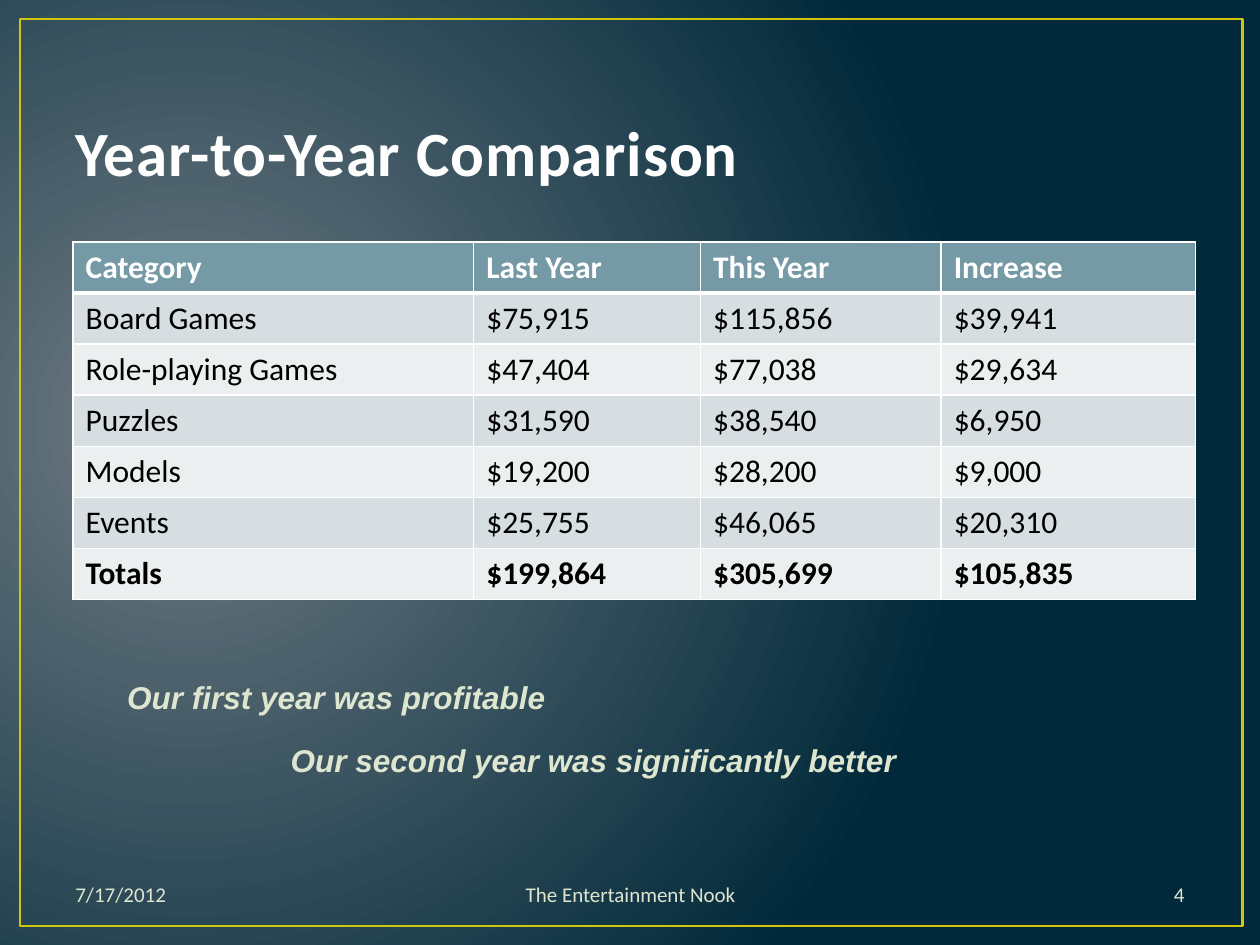
"""Build the year-to-year comparison slide."""
from dataclasses import dataclass

from lxml import etree
from pptx import Presentation
from pptx import util as u
from pptx.dml.color import RGBColor
from pptx.enum import shapes, text
from pptx.oxml import ns

HUES = {
    "glow": "717C84", "deep": "01293A", "frame": "CFC60D", "title": "FEFEFE",
    "edge": "384F55", "soft": "DFE6D0", "white": "FFFFFF", "black": "000000",
    "head": "759AA5", "odd": "D6DEE1", "even": "ECEFF0",
}
ROWS = [
    ("Category", "Last Year", "This Year", "Increase"),
    ("Board Games", "$75,915", "$115,856", "$39,941"),
    ("Role-playing Games", "$47,404", "$77,038", "$29,634"),
    ("Puzzles", "$31,590", "$38,540", "$6,950"),
    ("Models", "$19,200", "$28,200", "$9,000"),
    ("Events", "$25,755", "$46,065", "$20,310"),
    ("Totals", "$199,864", "$305,699", "$105,835"),
]
WIDTHS = (3.18, 1.8, 1.91, 2.02)
LEFT, CENTER, RIGHT = text.PP_ALIGN.LEFT, text.PP_ALIGN.CENTER, text.PP_ALIGN.RIGHT
TOP, MIDDLE, BOTTOM = text.MSO_ANCHOR.TOP, text.MSO_ANCHOR.MIDDLE, text.MSO_ANCHOR.BOTTOM


@dataclass
class Label:
    """A line of text with its place and look."""
    words: str
    at: tuple
    size: float = 12
    align: int = LEFT
    anchor: int = MIDDLE
    face: str = "Calibri"
    hue: str = "soft"
    bold: bool = False
    slant: bool = False


TITLE = Label("Year-to-Year Comparison", (0.5, 0.3, 9, 1.25), 36,
              anchor=BOTTOM, hue="title", bold=True)
FOOT = [
    Label("7/17/2012", (0.5, 6.9, 2.33, 0.4)),
    Label("The Entertainment Nook", (3.1, 6.9, 3.81, 0.4), align=CENTER),
    Label("4", (7.17, 6.9, 2.33, 0.4), align=RIGHT),
]
NOTES = [
    Label(words, at, 18, CENTER, TOP, "Arial", bold=True, slant=True)
    for words, at in (
        ("Our first year was profitable", (0.67, 5.33, 4, 0.4)),
        ("Our second year was significantly better", (2.17, 5.83, 5.08, 0.4)),
    )
]


def tint(name: str) -> RGBColor:
    """Return a named colour."""
    return RGBColor.from_string(HUES[name])


def node(tag: str, **attrs: str):
    """Make a drawing element."""
    return etree.Element(ns.qn(tag), attrs)


def stroke(tag: str, points: float, hue: str):
    """Make a solid line element."""
    line = node(tag, w=str(u.Pt(points)))
    fill = node("a:solidFill")
    fill.append(node("a:srgbClr", val=HUES[hue]))
    line.append(fill)
    return line


def style(para, size: float, face: str, hue: str, bold: bool, slant: bool = False) -> None:
    """Set the font of a paragraph."""
    font = para.font
    font.size, font.name = u.Pt(size), face
    font.bold, font.italic = bold, slant
    font.color.rgb = tint(hue)


def write(slide, label: Label):
    """Draw a label and return its paragraph."""
    box = slide.shapes.add_textbox(*map(u.Inches, label.at))
    frame = box.text_frame
    frame.word_wrap, frame.vertical_anchor = True, label.anchor
    para = frame.paragraphs[0]
    para.text, para.alignment = label.words, label.align
    style(para, label.size, label.face, label.hue, label.bold, label.slant)
    return para


def paint(slide) -> None:
    """Fill the background with a circular gradient."""
    fill = slide.background.fill
    fill.gradient()
    for stop, hue in zip(fill.gradient_stops, ("glow", "deep")):
        stop.color.rgb = tint(hue)
    grad = slide.element.find(".//" + ns.qn("a:gradFill"))
    ring = node("a:path", path="circle")
    ring.append(node("a:fillToRect", l="15000", t="50000", r="85000", b="60000"))
    grad.replace(grad.find(ns.qn("a:lin")), ring)


def border(slide) -> None:
    """Draw the frame round the slide."""
    rect = slide.shapes.add_shape(
        shapes.MSO_SHAPE.RECTANGLE, *map(u.Inches, (0.16, 0.15, 9.7, 7.2)))
    rect.shadow.inherit = False
    rect.fill.background()
    rect.line.color.rgb = tint("frame")
    rect.line.width = u.Pt(1.5)


def head(slide) -> None:
    """Draw the title with its spacing and outline."""
    props = write(slide, TITLE).runs[0].font._element
    props.set("spc", "50")
    props.insert(0, stroke("a:ln", 1.05, "edge"))


def grid(slide) -> None:
    """Draw the table of sales."""
    table = slide.shapes.add_table(
        len(ROWS), len(WIDTHS), *map(u.Inches, (0.58, 1.92, 8.91, 2.84))).table
    for col, width in zip(table.columns, WIDTHS):
        col.width = u.Inches(width)
    for r, row in enumerate(ROWS):
        first = r == 0
        shade = "head" if first else ("even", "odd")[r % 2]
        for c, words in enumerate(row):
            cell = table.cell(r, c)
            cell.text = words
            style(cell.text_frame.paragraphs[0], 18, "Calibri",
                  "white" if first else "black", first or r == len(ROWS) - 1)
            cell.fill.solid()
            cell.fill.fore_color.rgb = tint(shade)
            props = cell._tc.get_or_add_tcPr()
            for i, side in enumerate("LRTB"):
                thick = (side, r) in (("B", 0), ("T", 1))
                props.insert(i, stroke(f"a:ln{side}", 3 if thick else 1, "white"))


def main() -> None:
    """Build and save the slide."""
    deck = Presentation()
    deck.slide_width, deck.slide_height = u.Inches(10), u.Inches(7.5)
    slide = deck.slides.add_slide(deck.slide_layouts[6])
    paint(slide)
    border(slide)
    head(slide)
    for label in FOOT + NOTES:
        write(slide, label)
    grid(slide)
    deck.save("out.pptx")


if __name__ == "__main__":
    main()
